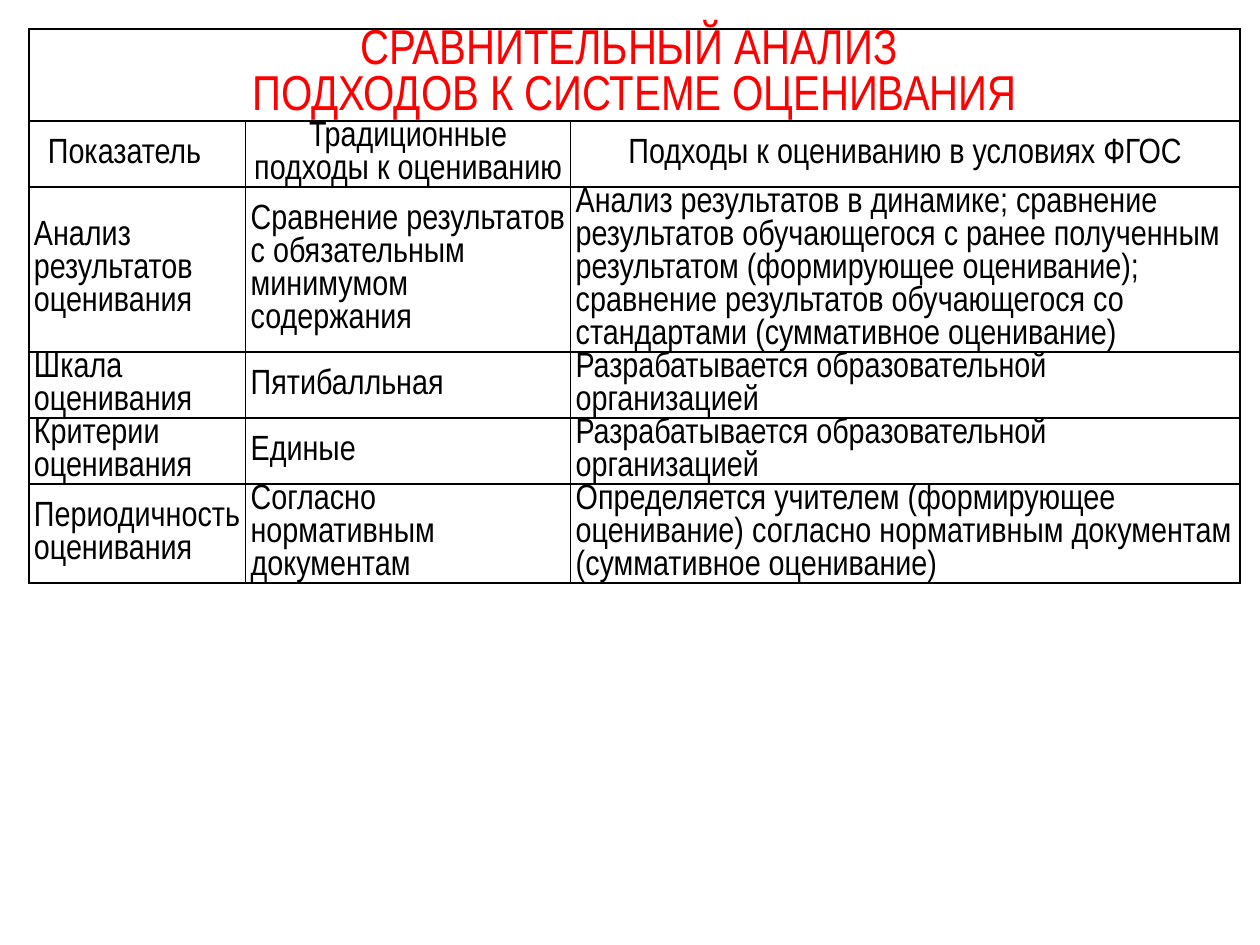
from lxml.etree import SubElement
from pptx import Presentation
from pptx.dml.color import RGBColor
from pptx.enum.text import MSO_ANCHOR, PP_ALIGN
from pptx.oxml.ns import qn
from pptx.util import Inches, Pt

BLACK = RGBColor(0, 0, 0)
RED = RGBColor(255, 0, 0)
FONT = "Arial Narrow"
TITLE = ["СРАВНИТЕЛЬНЫЙ АНАЛИЗ ", "ПОДХОДОВ К СИСТЕМЕ ОЦЕНИВАНИЯ"]
ROWS = [
    ["Показатель", "Традиционные подходы к оцениванию",
     "Подходы к оцениванию в условиях ФГОС"],
    ["Анализ результатов оценивания",
     "Сравнение результатов с обязательным минимумом содержания",
     "Анализ результатов в динамике; сравнение результатов обучающегося "
     "с ранее полученным результатом (формирующее оценивание); сравнение "
     "результатов обучающегося со стандартами (суммативное оценивание)"],
    ["Шкала оценивания", "Пятибалльная",
     "Разрабатывается образовательной организацией"],
    ["Критерии оценивания", "Единые",
     "Разрабатывается образовательной организацией"],
    ["Периодичность оценивания", "Согласно нормативным документам",
     "Определяется учителем (формирующее оценивание) согласно "
     "нормативным документам (суммативное оценивание)"],
]
COLUMN_WIDTHS = [1.72, 2.58, 5.31]
ROW_HEIGHTS = [0.09, 0.16, 0.69, 0.17, 0.17, 0.43]


def format_cell(cell):
    """Give a cell its margins, thin black borders and no fill."""
    cell.margin_left = cell.margin_right = Inches(0.04)
    cell.margin_top = cell.margin_bottom = 0
    properties = cell._tc.get_or_add_tcPr()
    for side in ("a:lnL", "a:lnR", "a:lnT", "a:lnB"):
        line = SubElement(properties, qn(side), w=str(Pt(1)))
        fill = SubElement(line, qn("a:solidFill"))
        SubElement(fill, qn("a:srgbClr"), val=str(BLACK))
    cell.fill.background()


def write_cell(cell, lines, size, color, alignment, anchor):
    """Write one paragraph per line into a cell."""
    cell.vertical_anchor = anchor
    frame = cell.text_frame
    for index, line in enumerate(lines):
        paragraph = frame.add_paragraph() if index else frame.paragraphs[0]
        paragraph.alignment = alignment
        run = paragraph.add_run()
        run.text = line
        run.font.name = FONT
        run.font.size = Pt(size)
        run.font.color.rgb = color


def add_comparison_table(slide, left, top, width, height):
    """Place the comparison table with its merged title row in the box."""
    shape = slide.shapes.add_table(
        len(ROW_HEIGHTS), len(COLUMN_WIDTHS), left, top, width, height)
    table = shape.table
    table.first_row = table.horz_banding = False
    for column, column_width in zip(table.columns, COLUMN_WIDTHS):
        column.width = Inches(column_width)
    for row, row_height in zip(table.rows, ROW_HEIGHTS):
        row.height = Inches(row_height)
    shape.height = height
    for cell in table.iter_cells():
        format_cell(cell)

    title = table.cell(0, 0)
    title.merge(table.cell(0, len(COLUMN_WIDTHS) - 1))
    write_cell(title, TITLE, 28, RED, PP_ALIGN.CENTER, MSO_ANCHOR.TOP)
    for row_index, texts in enumerate(ROWS, start=1):
        for column_index, text in enumerate(texts):
            centered = row_index == 1 and column_index > 0
            at_bottom = row_index == 1 and column_index == 1
            write_cell(table.cell(row_index, column_index), [text], 20, BLACK,
                       PP_ALIGN.CENTER if centered else PP_ALIGN.LEFT,
                       MSO_ANCHOR.BOTTOM if at_bottom else MSO_ANCHOR.MIDDLE)
    indicator = table.cell(1, 0).text_frame.paragraphs[0]
    indicator._p.get_or_add_pPr().set("marL", str(Inches(0.11)))


def main():
    """Build the slide and save it."""
    presentation = Presentation()
    presentation.slide_width = Inches(10)
    presentation.slide_height = Inches(7.5)
    slide = presentation.slides.add_slide(presentation.slide_layouts[6])
    add_comparison_table(
        slide, Inches(0.23), Inches(0.23), Inches(9.61), Inches(5.6))
    presentation.save("out.pptx")


if __name__ == "__main__":
    main()
